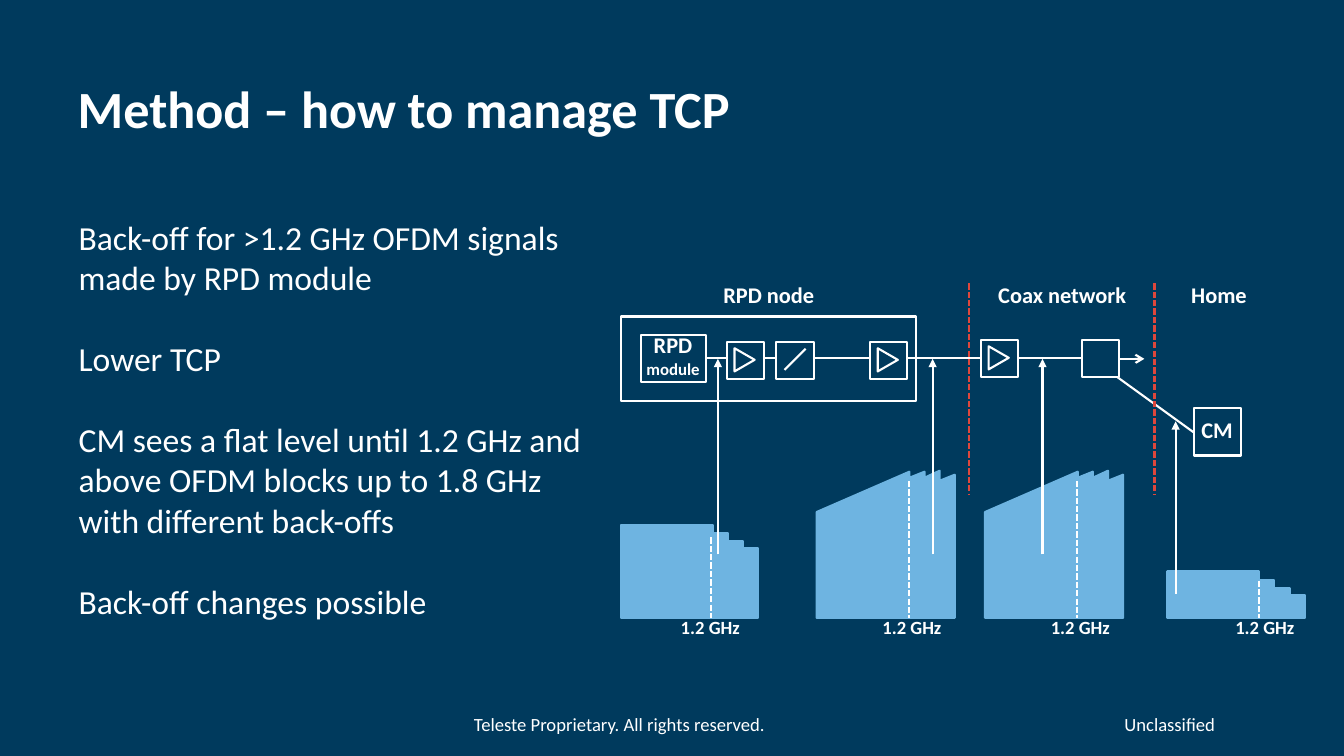
from dataclasses import dataclass

from lxml.etree import SubElement
from pptx import Presentation
from pptx.dml.color import RGBColor
from pptx.enum.shapes import MSO_CONNECTOR, MSO_SHAPE
from pptx.enum.text import MSO_ANCHOR, MSO_AUTO_SIZE, PP_ALIGN
from pptx.oxml.ns import qn
from pptx.util import Emu, Pt

EMU_PER_PX = 9144
FONT = "Calibri"
LINE_WIDTH = Pt(1.5)
COLORS = {"navy": "003A5D", "white": "FFFFFF", "sky": "6EB4E1", "red": "DE473C"}

FLOOR = 613
WIRE_Y = 355
BOX_SIZE = 37
STEPPED = ((0, 0), (91, 0), (91, 8), (106, 8), (106, 16), (121, 16), (121, 23), (136, 23))
SLOPED = ((0, 40), (92, 0), (92, 6), (107, 0), (107, 6), (122, -1), (122, 9), (137, 3))


@dataclass(frozen=True)
class Label:
    left: int
    top: int
    width: int
    height: int
    runs: tuple[tuple[str, float], ...]
    bold: bool = True
    align: PP_ALIGN = PP_ALIGN.CENTER


@dataclass(frozen=True)
class Wire:
    x1: int
    y1: int
    x2: int
    y2: int
    color: str = "white"
    dash: str = ""
    arrow: str = ""


@dataclass(frozen=True)
class Box:
    left: int
    top: int
    width: int = BOX_SIZE
    height: int = BOX_SIZE
    amplifier: bool = False


@dataclass(frozen=True)
class Spectrum:
    left: int
    top: int
    outline: tuple[tuple[int, int], ...]
    marker_x: int
    marker_top: int
    label_left: int
    probe_x: int
    probe_start: int = 550
    probe_end: int = 356


SPECTRA = (
    Spectrum(616, 521, STEPPED, 705, 533, 637, 712),
    Spectrum(810, 468, SLOPED, 902, 477, 837, 925),
    Spectrum(977, 468, SLOPED, 1068, 477, 1004, 1034),
    Spectrum(1158, 567, STEPPED, 1249, 576, 1187, 1166, 589, 418),
)
BOXES = (
    Box(616, 314, 293, 84),
    Box(636, 332, 64, 47),
    Box(721, 339, amplifier=True),
    Box(770, 339),
    Box(863, 339, amplifier=True),
    Box(973, 337, amplifier=True),
    Box(1073, 337),
    Box(1184, 405, 47, 47),
)
WIRES = (
    *(Wire(start, WIRE_Y, end, WIRE_Y)
      for start, end in ((700, 721), (757, 769), (807, 864), (901, 972), (1009, 1073))),
    Wire(778, 367, 799, 346),
    Wire(1184, 429, 1108, 374),
    Wire(1110, 356, 1135, 356, arrow="arrow"),
    *(Wire(x, 281, x, 491, "red", "sysDash") for x in (961, 1145)),
)
LABELS = (
    Label(677, 274, 171, 37, (("RPD node", 16),)),
    Label(968, 274, 171, 37, (("Coax network", 16),)),
    Label(1165, 274, 88, 37, (("Home", 16),)),
    Label(620, 324, 95, 57, (("RPD", 16), ("module", 12))),
    Label(1174, 408, 66, 37, (("CM", 16),)),
    Label(381, 702, 467, 33, (("Teleste Proprietary. All rights reserved.", 13.3),), False),
    Label(877, 702, 338, 33, (("Unclassified", 13.3),), False, PP_ALIGN.RIGHT),
)
METHOD_POINTS = (
    "Back-off for >1.2 GHz OFDM signals made by RPD module",
    "Lower TCP",
    "CM sees a flat level until 1.2 GHz and above OFDM blocks up to 1.8 GHz with different back-offs",
    "Back-off changes possible",
)


def px(length: int) -> Emu:
    return Emu(length * EMU_PER_PX)


def rgb(name: str) -> RGBColor:
    return RGBColor.from_string(COLORS[name])


def place(shape, left: int, top: int, width: int, height: int) -> None:
    shape.left, shape.top, shape.width, shape.height = map(px, (left, top, width, height))


def add_run(paragraph, text: str, size: float, bold: bool) -> None:
    run = paragraph.add_run()
    run.text = text
    run.font.name = FONT
    run.font.size = Pt(size)
    run.font.bold = bold
    run.font.color.rgb = rgb("white")


def set_line(shape, color: str) -> None:
    shape.line.color.rgb = rgb(color)
    shape.line.width = LINE_WIDTH


def draw_label(slide, label: Label) -> None:
    bounds = map(px, (label.left, label.top, label.width, label.height))
    frame = slide.shapes.add_textbox(*bounds).text_frame
    frame.word_wrap = True
    paragraph = frame.paragraphs[0]
    paragraph.alignment = label.align
    for index, (text, size) in enumerate(label.runs):
        if index:
            paragraph.add_line_break()
        add_run(paragraph, text, size, label.bold)


def draw_wire(slide, wire: Wire) -> None:
    ends = map(px, (wire.x1, wire.y1, wire.x2, wire.y2))
    connector = slide.shapes.add_connector(MSO_CONNECTOR.STRAIGHT, *ends)
    set_line(connector, wire.color)
    properties = connector._element.spPr
    outline = properties.find(qn("a:ln"))
    if wire.dash:
        SubElement(outline, qn("a:prstDash"), val=wire.dash)
    if wire.arrow:
        SubElement(outline, qn("a:tailEnd"), type=wire.arrow)
    SubElement(properties, qn("a:effectLst"))


def draw_outline(slide, kind: MSO_SHAPE, left: int, top: int, width: int, height: int):
    shape = slide.shapes.add_shape(kind, *map(px, (left, top, width, height)))
    shape.shadow.inherit = False
    shape.fill.background()
    set_line(shape, "white")
    return shape


def draw_box(slide, box: Box) -> None:
    draw_outline(slide, MSO_SHAPE.RECTANGLE, box.left, box.top, box.width, box.height)
    if box.amplifier:
        triangle = draw_outline(
            slide, MSO_SHAPE.ISOSCELES_TRIANGLE, box.left + 6, box.top + 8, 23, 20)
        triangle.rotation = 90


def draw_spectrum(slide, spectrum: Spectrum) -> None:
    top_edge = [(spectrum.left + x, spectrum.top + y) for x, y in spectrum.outline]
    builder = slide.shapes.build_freeform(spectrum.left, FLOOR, scale=EMU_PER_PX)
    builder.add_line_segments([*top_edge, (top_edge[-1][0], FLOOR)], close=True)
    band = builder.convert_to_shape()
    band.shadow.inherit = False
    band.fill.solid()
    band.fill.fore_color.rgb = rgb("sky")
    set_line(band, "sky")
    draw_wire(slide, Wire(spectrum.marker_x, spectrum.marker_top,
                          spectrum.marker_x, FLOOR, dash="sysDash"))
    draw_wire(slide, Wire(spectrum.probe_x, spectrum.probe_start,
                          spectrum.probe_x, spectrum.probe_end, arrow="triangle"))
    draw_label(slide, Label(spectrum.label_left, 606, 135, 33, (("1.2 GHz", 13.3),)))


def draw_title(slide) -> None:
    title = slide.shapes.title
    place(title, 67, 71, 1219, 123)
    frame = title.text_frame
    frame.auto_size = MSO_AUTO_SIZE.NONE
    frame.vertical_anchor = MSO_ANCHOR.TOP
    frame.paragraphs[0].alignment = PP_ALIGN.LEFT
    add_run(frame.paragraphs[0], "Method – how to manage TCP", 37.3, True)


def draw_method_points(slide) -> None:
    frame = slide.shapes.add_textbox(*map(px, (65, 208, 526, 467))).text_frame
    frame.word_wrap = True
    frame.margin_left = frame.margin_right = px(13)
    frame.margin_top = frame.margin_bottom = px(7)
    for index, point in enumerate(METHOD_POINTS):
        paragraph = frame.add_paragraph() if index else frame.paragraphs[0]
        if index:
            paragraph.space_before = Pt(29)
        add_run(paragraph, point, 24, False)


def main() -> None:
    deck = Presentation()
    deck.slide_width, deck.slide_height = px(1333), px(750)
    slide = deck.slides.add_slide(deck.slide_layouts.get_by_name("Title Only"))
    slide.background.fill.solid()
    slide.background.fill.fore_color.rgb = rgb("navy")
    draw_title(slide)
    draw_method_points(slide)
    for items, draw in ((SPECTRA, draw_spectrum), (BOXES, draw_box),
                        (WIRES, draw_wire), (LABELS, draw_label)):
        for item in items:
            draw(slide, item)
    deck.save("out.pptx")


if __name__ == "__main__":
    main()
